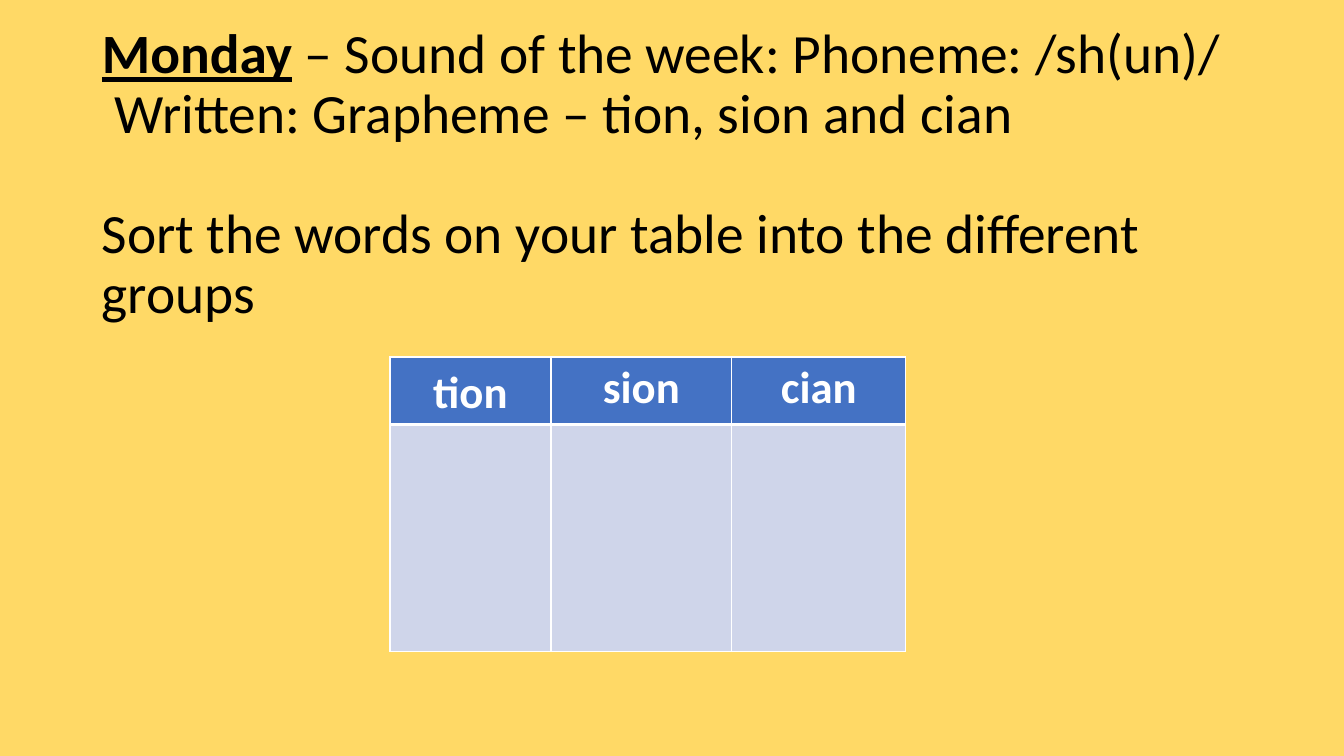
"""Build the Monday phoneme slide with its word-sorting table."""
from lxml.etree import SubElement
from pptx import Presentation
from pptx.dml.color import RGBColor
from pptx.enum.text import MSO_ANCHOR as ANCHOR, PP_ALIGN as ALIGN
from pptx.oxml.ns import qn
from pptx.util import Emu, Pt

PX = 9144000 / 1008
FONT = "Calibri"
YELLOW = RGBColor(0xFF, 0xD9, 0x66)
BLACK = RGBColor(0, 0, 0)
WHITE = RGBColor(0xFF, 0xFF, 0xFF)
BLUE = RGBColor(0x44, 0x72, 0xC4)
PALE = RGBColor(0xCF, 0xD5, 0xEA)
HEADINGS = ["tion", "sion", "cian"]
COLUMNS = [161, 181, 174]
ROWS = [66, 227]
INTRO = [
    [("Monday", True), (" – Sound of the week: Phoneme: /sh(un)/", False)],
    [(" Written: Grapheme – tion, sion and cian", False)],
    [("Sort the words on your table into the different groups", False)],
]


def px(n):
    """Turn px into EMU."""
    return Emu(round(n * PX))


def style(p, size, color, spacing):
    """Set the font and line spacing of a paragraph."""
    p.font.name, p.font.size = FONT, Pt(size)
    p.font.color.rgb = color
    p.line_spacing = spacing


def add_intro(s):
    """Add the heading lines and the task."""
    tf = s.shapes.add_textbox(px(92), px(26), px(1160), px(300)).text_frame
    tf.word_wrap = True
    tf.vertical_anchor = ANCHOR.TOP
    tf.margin_top = tf.margin_bottom = 0
    for i, runs in enumerate(INTRO):
        p = tf.add_paragraph() if i else tf.paragraphs[0]
        style(p, 39.6, BLACK, 0.9)
        for text, strong in runs:
            r = p.add_run()
            r.text = text
            r.font.bold = r.font.underline = strong
    p.space_before = Pt(43)


def set_borders(cell, top, bottom):
    """Draw white borders round a cell, with widths in points."""
    tc_pr = cell._tc.get_or_add_tcPr()
    for side, width in zip("LRTB", (1, 1, top, bottom)):
        ln = SubElement(tc_pr, qn(f"a:ln{side}"), w=str(Pt(width)))
        fill = SubElement(ln, qn("a:solidFill"))
        SubElement(fill, qn("a:srgbClr"), val=str(WHITE))


def fill_cell(cell, color, top, bottom):
    """Give a cell its borders and background."""
    set_borders(cell, top, bottom)
    cell.fill.solid()
    cell.fill.fore_color.rgb = color


def add_heading(cell, text, inset):
    """Write a centred column heading."""
    if not inset:
        cell.margin_left = cell.margin_right = 0
        cell.margin_top = cell.margin_bottom = 0
    p = cell.text_frame.paragraphs[0]
    p.text = text
    p.alignment = ALIGN.CENTER
    p.space_after = Pt(8)
    p.font.bold = True
    style(p, 32, WHITE, 1.07)


def add_sorting_table(s):
    """Add the table with one column for each ending."""
    table = s.shapes.add_table(len(ROWS), len(COLUMNS), px(390), px(357),
                               px(sum(COLUMNS)), px(sum(ROWS))).table
    table.first_row = table.horz_banding = False
    for row, height in zip(table.rows, ROWS):
        row.height = px(height)
    for i, (heading, width) in enumerate(zip(HEADINGS, COLUMNS)):
        table.columns[i].width = px(width)
        fill_cell(table.cell(0, i), BLUE, 1, 3)
        fill_cell(table.cell(1, i), PALE, 3, 1)
        add_heading(table.cell(0, i), heading, inset=i == 0)


def main():
    """Build and save the slide."""
    prs = Presentation()
    prs.slide_width, prs.slide_height = px(1344), px(756)
    s = prs.slides.add_slide(prs.slide_layouts[6])
    s.background.fill.solid()
    s.background.fill.fore_color.rgb = YELLOW
    add_intro(s)
    add_sorting_table(s)
    prs.save("out.pptx")


if __name__ == "__main__":
    main()
